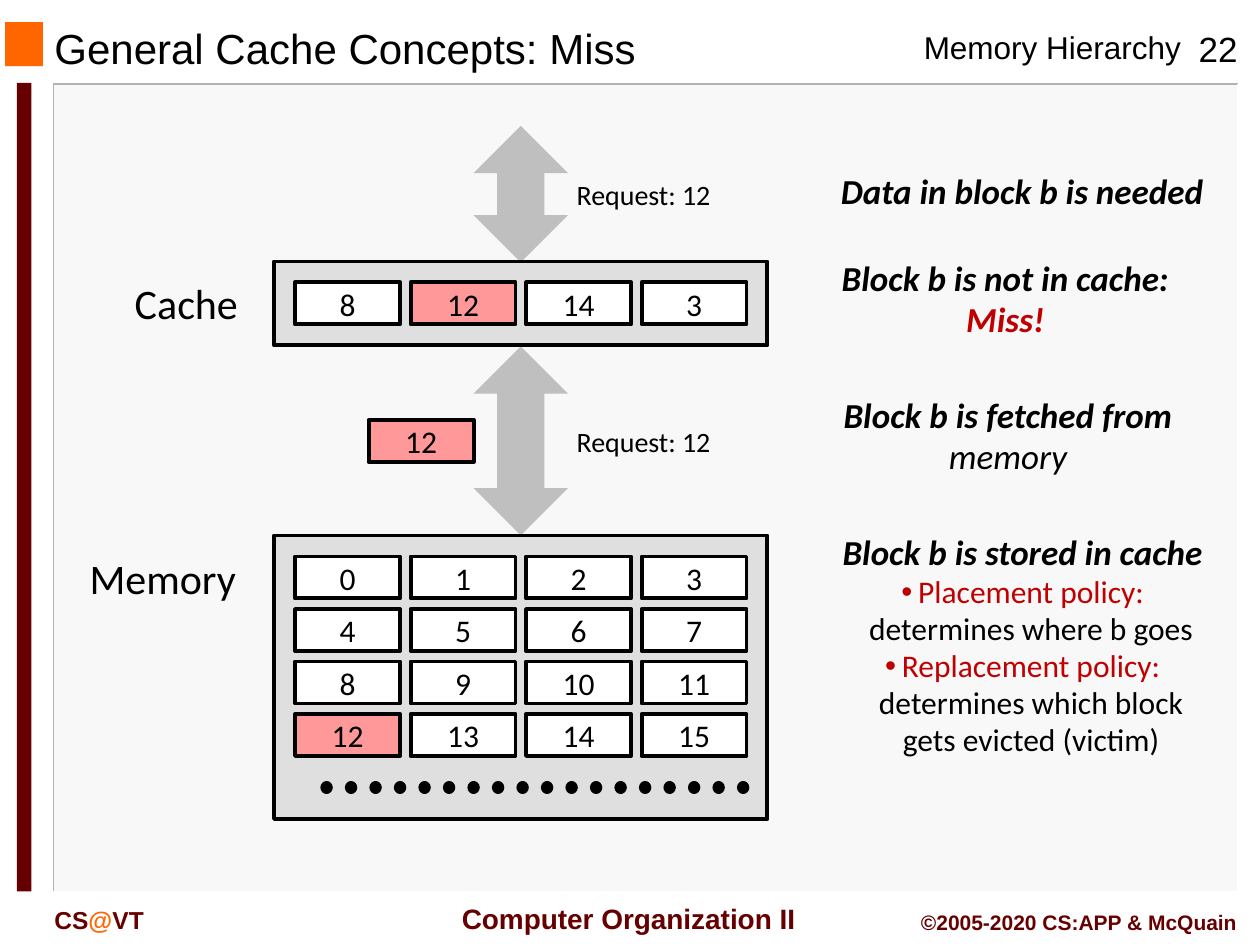
from pptx import Presentation, util as u
from pptx.dml.color import RGBColor
from pptx.enum import dml, shapes, text
from pptx.oxml import parse_xml
from pptx.oxml.ns import nsdecls, qn

PX = 7620  # EMU in one px, 120 px to the inch
KIND = shapes.MSO_SHAPE
LEFT, MID, RIGHT = text.PP_ALIGN.LEFT, text.PP_ALIGN.CENTER, text.PP_ALIGN.RIGHT
BLACK, MAROON, ORANGE, RED = "000000", "660000", "FF6600", "C00000"
GREY, PINK, WHITE = "DFDFDF", "FF9999", "FFFFFF"
PAD = 20


def emu(*px):
    return [u.Emu(n * PX) for n in px]


def tint(hue):
    return RGBColor.from_string(hue)


def style(run, size, hue, face, bold=False, slant=False):
    font = run.font
    font.size, font.name = u.Pt(size), face
    font.bold, font.italic = bold, slant
    font.color.rgb = tint(hue)


def block(slide, box, fill, edge=None, kind=KIND.RECTANGLE, word=""):
    shape = slide.shapes.add_shape(kind, *emu(*box))
    shape.shadow.inherit = False
    shape.fill.solid()
    shape.fill.fore_color.rgb = tint(fill)
    if edge:
        shape.line.color.rgb = tint(edge)
        shape.line.width = u.Pt(2.25)
    else:
        shape.line.fill.background()
    if word:
        frame = shape.text_frame
        frame.text = word
        frame.vertical_anchor = text.MSO_ANCHOR.MIDDLE
        para = frame.paragraphs[0]
        para.alignment = MID
        style(para.runs[0], 18, BLACK, "Calibri")


def label(slide, box, parts, size, face="Calibri", bold=False, align=MID, wrap=False):
    """One line of text; parts are (word, colour) pairs."""
    frame = slide.shapes.add_textbox(*emu(*box)).text_frame
    frame.word_wrap = wrap
    frame.vertical_anchor = text.MSO_ANCHOR.MIDDLE
    para = frame.paragraphs[0]
    para.alignment = align
    for word, hue in parts:
        run = para.add_run()
        run.text = word
        style(run, size, hue, face, bold)


def rule(slide, points, hue):
    start, *rest = points
    draw = slide.shapes.build_freeform(*start, scale=PX)
    draw.add_line_segments(rest, close=False)
    line = draw.convert_to_shape()
    line.shadow.inherit = False
    line.fill.background()
    line.line.color.rgb = tint(hue)
    line.line.width = u.Pt(1)


def panel(slide, x, y, w, h):
    """Body panel with its bevel lines and side bar."""
    block(slide, (x, y, w, h), "F8F8F8")
    rule(slide, [(x + w, y), (x, y), (x, y + h)], "B2B2B2")
    rule(slide, [(x + w, y), (x + w, y + h), (x, y + h)], WHITE)
    block(slide, (x - 35, y - 1, 14, h + 1), MAROON)


def header(slide, x, y):
    block(slide, (x, y, 36, 42), ORANGE)
    label(slide, (x + 35, y + 1, 760, 46), [("General Cache Concepts: Miss", BLACK)],
          24, "Arial", align=LEFT, wrap=True)
    label(slide, (x + 863, y, 271, 48), [("Memory Hierarchy", BLACK)],
          18, "Arial", align=LEFT)
    label(slide, (x + 1115, y - 1, 80, 52), [("22", BLACK)], 20, "Arial", wrap=True)


def footer(slide, x, y):
    label(slide, (x, y + 3, 180, 40), [("CS", MAROON), ("@", ORANGE), ("VT", MAROON)],
          14, "Arial", True, LEFT, True)
    label(slide, (x + 378, y, 354, 44), [(" Computer Organization II", MAROON)],
          16, "Arial", True)
    label(slide, (x + 820, y + 7, 330, 36), [("©2005-2020 CS:APP & McQuain", MAROON)],
          12, "Arial", True, RIGHT, True)


def cell(slide, x, y, num):
    block(slide, (x, y, 100, 40), PINK if num == 12 else WHITE, BLACK, word=str(num))


def store(slide, box, rows):
    """Framed grid of numbered blocks."""
    x, y = box[:2]
    block(slide, box, GREY, BLACK)
    for r, row in enumerate(rows):
        for c, num in enumerate(row):
            cell(slide, x + PAD + 110 * c, y + PAD + 50 * r, num)


def dots(slide, x, y, w):
    line = slide.shapes.add_connector(shapes.MSO_CONNECTOR.STRAIGHT, *emu(x, y, x + w, y))
    line.line.color.rgb = tint(BLACK)
    line.line.width = u.Pt(7)
    line.line.dash_style = dml.MSO_LINE.ROUND_DOT
    props = line.element.spPr
    props.find(qn("a:ln")).set("cap", "rnd")
    props.append(parse_xml(f"<a:effectLst {nsdecls('a')}/>"))


def request(slide, x, y, h):
    """Double arrow with the request beside it."""
    block(slide, (x, y, 90, h), "BFBFBF", kind=KIND.UP_DOWN_ARROW)
    label(slide, (x + 84, y + h // 2 - 22, 156, 44), [("Request: 12", BLACK)], 16)


def diagram(slide, x, y):
    request(slide, x + 190, y, 130)
    request(slide, x + 190, y + 210, 180)
    store(slide, (x, y + 129, 470, 80), [(8, 12, 14, 3)])
    store(slide, (x, y + 390, 470, 270), [range(n, n + 4) for n in range(0, 16, 4)])
    dots(slide, x + 50, y + 630, 400)
    cell(slide, x + 90, y + 280, 12)
    label(slide, (x - 146, y + 138, 125, 60), [("Cache", BLACK)], 24)
    label(slide, (x - 190, y + 400, 168, 60), [("Memory", BLACK)], 24)


def step(slide, box, head, tail="", hue=BLACK, bold=True, items=()):
    """Step text: a headline, an optional second line, then bulleted policies."""
    frame = slide.shapes.add_textbox(*emu(*box)).text_frame
    frame.word_wrap = False
    frame.vertical_anchor = text.MSO_ANCHOR.MIDDLE
    lines = [head] + ([tail] if tail else []) + list(items)
    frame.text = "\n".join(lines)
    for para, line in zip(frame.paragraphs, lines):
        para.alignment = MID
        para.line_spacing = 0.98
        if line in items:
            for n, run in enumerate(para.runs):
                style(run, 18, BLACK if n else RED, "Calibri")
            props = para._p.get_or_add_pPr()
            props.set("marL", str(16 * PX))
            props.set("indent", str(-16 * PX))
            mark = f"<a:buClr {nsdecls('a')}><a:srgbClr val='{RED}'/></a:buClr>"
            props.append(parse_xml(mark))
            props.append(parse_xml(f"<a:buFont {nsdecls('a')} typeface='Arial'/>"))
            props.append(parse_xml(f"<a:buChar {nsdecls('a')} char='•'/>"))
        else:
            last = line == tail
            style(para.runs[0], 20, hue if last else BLACK, "Calibri",
                  bold if last else True, True)


def steps(slide, x, y):
    step(slide, (x, y, 371, 52), "Data in block b is needed")
    step(slide, (x + 1, y + 83, 337, 91), "Block b is not in cache:", "Miss!", RED)
    step(slide, (x + 2, y + 213, 340, 91), "Block b is fetched from", "memory", bold=False)
    step(slide, (x + 2, y + 343, 368, 230), "Block b is stored in cache", items=(
        "Placement policy:\vdetermines where b goes",
        "Replacement policy:\vdetermines which block\vgets evicted (victim)"))


def main():
    deck = Presentation()
    deck.slide_width, deck.slide_height = emu(1200, 900)
    slide = deck.slides.add_slide(deck.slide_layouts[6])
    panel(slide, 51, 80, 1128, 769)
    header(slide, 5, 21)
    footer(slide, 40, 853)
    diagram(slide, 261, 120)
    steps(slide, 788, 157)
    deck.save("out.pptx")


if __name__ == "__main__":
    main()
